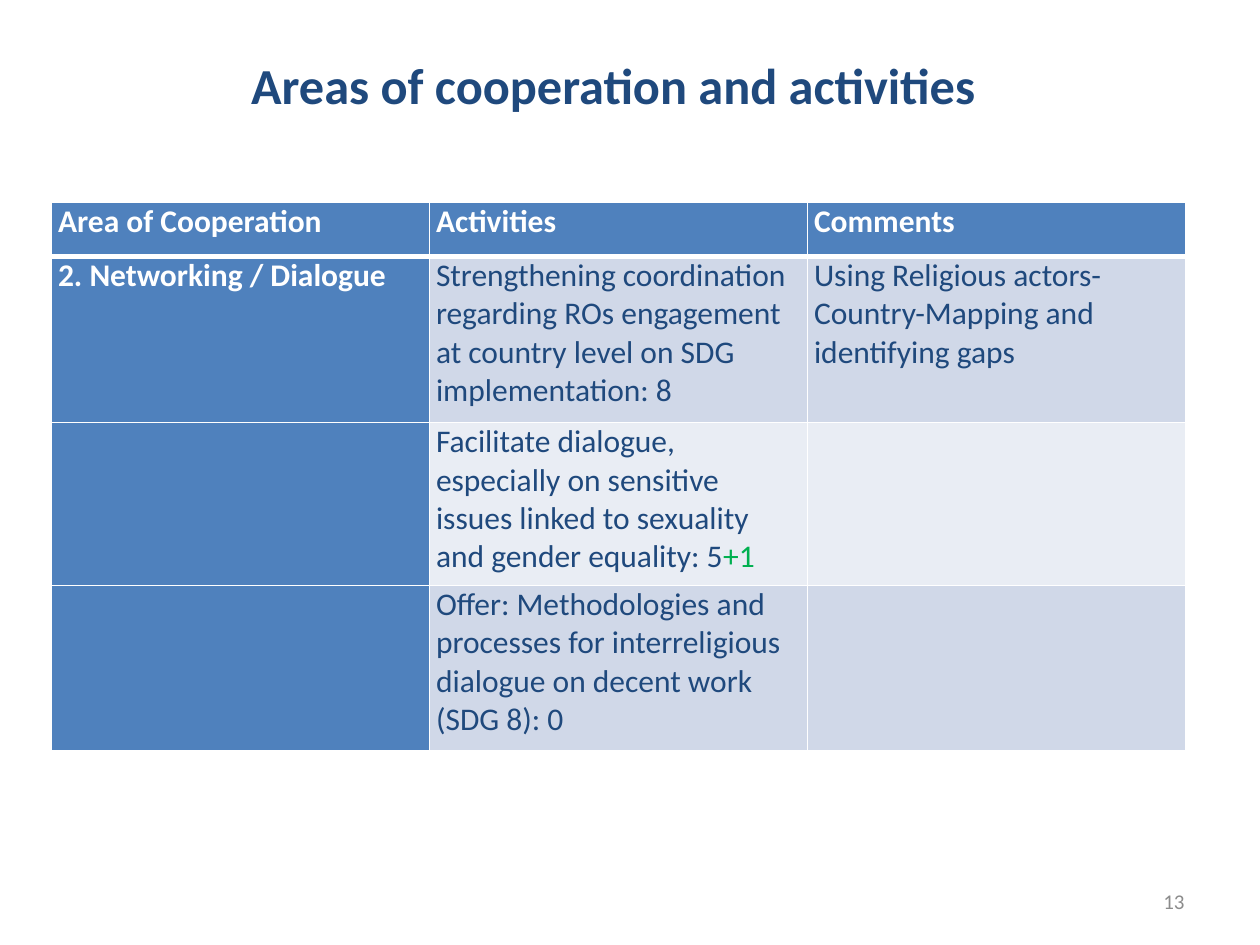
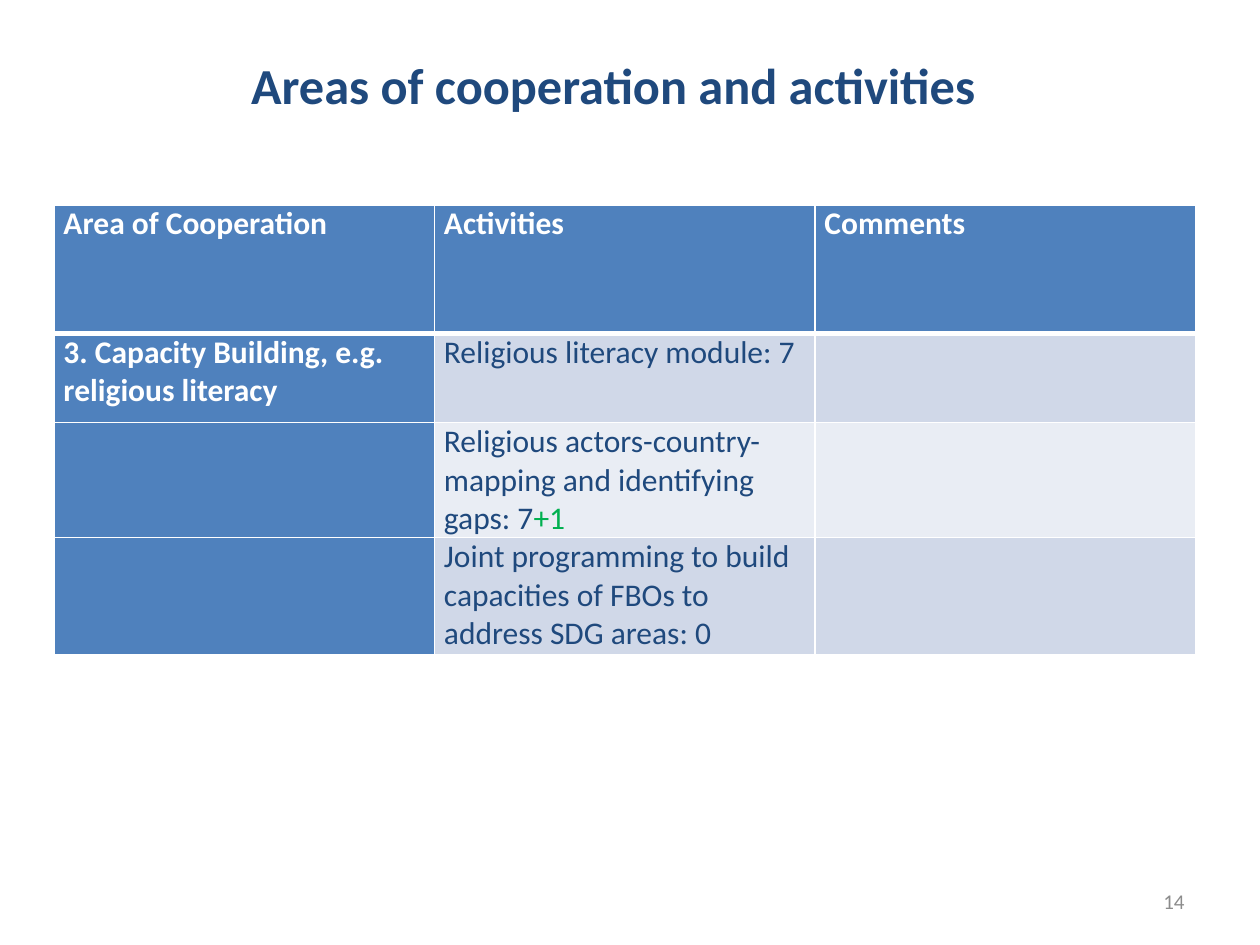
from lxml import etree
from pptx import Presentation
from pptx.dml.color import RGBColor
from pptx.enum.text import MSO_ANCHOR, PP_ALIGN
from pptx.oxml.ns import qn
from pptx.util import Cm, Pt

COLORS = {
    "navy": "1F497D",
    "blue": "4F81BD",
    "band_dark": "D0D8E8",
    "band_light": "E9EDF4",
    "white": "FFFFFF",
    "green": "00B050",
    "gray": "8C8C8C",
}
FONT = "Calibri"
HEADINGS = ["Area of Cooperation", "Activities", "Comments"]

# Each activity is its text followed by any votes added later
pages = [
    {
        "number": "13", "left": 1.04, "top": 4.08, "column": 7.62, "inset": 0.13,
        "heights": [1.09, 3.35, 3.28, 3.33],
        "rows": [
            [["2. Networking / Dialogue"],
             ["Strengthening coordination regarding ROs engagement at country "
              "level on SDG implementation: 8"],
             ["Using Religious actors-Country-Mapping and identifying gaps"]],
            [[], ["Facilitate dialogue, especially on sensitive issues linked to "
                  "sexuality and gender equality: 5", "+1"], []],
            [[], ["Offer: Methodologies and processes for interreligious dialogue "
                  "on decent work (SDG 8): 0"], []],
        ],
    },
    {
        "number": "14", "left": 1.09, "top": 4.13, "column": 7.67, "inset": 0.19,
        "heights": [2.59, 1.8, 2.32, 2.36],
        "rows": [
            [["3. Capacity Building, e.g. religious literacy"],
             ["Religious literacy module: 7"], []],
            [[], ["Religious actors-country-mapping and identifying gaps: 7", "+1"], []],
            [[], ["Joint programming to build capacities of FBOs to address "
                  "SDG areas: 0"], []],
        ],
    },
]


def write(paragraph, text, size, color, bold=False):
    run = paragraph.add_run()
    run.text = text
    run.font.name = FONT
    run.font.size = Pt(size)
    run.font.bold = bold
    run.font.color.rgb = RGBColor.from_string(COLORS[color])


def add_border(cell, side, width):
    line = etree.SubElement(cell._tc.get_or_add_tcPr(), qn(f"a:ln{side}"), w=str(Pt(width)))
    fill = etree.SubElement(line, qn("a:solidFill"))
    etree.SubElement(fill, qn("a:srgbClr"), val=COLORS["white"])


prs = Presentation()
prs.slide_width, prs.slide_height = Cm(25.4), Cm(19.05)

for page in pages:
    slide = prs.slides.add_slide(prs.slide_layouts[6])

    # Title
    title = slide.shapes.add_textbox(Cm(1.7), Cm(0.91), Cm(21.59), Cm(2.69)).text_frame
    title.word_wrap = True
    title.vertical_anchor = MSO_ANCHOR.TOP
    title.margin_top = Cm(0.18)
    title.margin_right = Cm(0.5)
    title.paragraphs[0].alignment = PP_ALIGN.CENTER
    write(title.paragraphs[0], "Areas of cooperation and activities", 28.8, "navy", True)

    # Table of activities
    rows = [[[heading] for heading in HEADINGS]] + page["rows"]
    activities = slide.shapes.add_table(
        len(rows), len(HEADINGS), Cm(page["left"]), Cm(page["top"]),
        Cm(page["column"] * len(HEADINGS)), Cm(sum(page["heights"]))).table
    activities.horz_banding = False
    activities.first_col = True
    for column in activities.columns:
        column.width = Cm(page["column"])

    for r, row in enumerate(rows):
        activities.rows[r].height = Cm(page["heights"][r])
        for c, parts in enumerate(row):
            cell = activities.cell(r, c)
            cell.margin_left = cell.margin_right = Cm(page["inset"])
            cell.margin_top = cell.margin_bottom = 0

            # A thick rule separates the header from the body
            widths = {"L": 1, "R": 1, "T": 3 if r == 1 else 1, "B": 3 if r == 0 else 1}
            for side, width in widths.items():
                add_border(cell, side, width)

            heading = r == 0 or c == 0
            band = "band_dark" if r % 2 else "band_light"
            cell.fill.solid()
            cell.fill.fore_color.rgb = RGBColor.from_string(COLORS["blue" if heading else band])
            for part, color in zip(parts, ["white" if heading else "navy", "green"]):
                write(cell.text_frame.paragraphs[0], part, 18, color, heading)

    # Page number
    footer = slide.shapes.add_textbox(Cm(18.2), Cm(17.66), Cm(5.93), Cm(1.01)).text_frame
    footer.word_wrap = True
    footer.vertical_anchor = MSO_ANCHOR.MIDDLE
    footer.paragraphs[0].alignment = PP_ALIGN.RIGHT
    write(footer.paragraphs[0], page["number"], 12, "gray")

prs.save("out.pptx")
